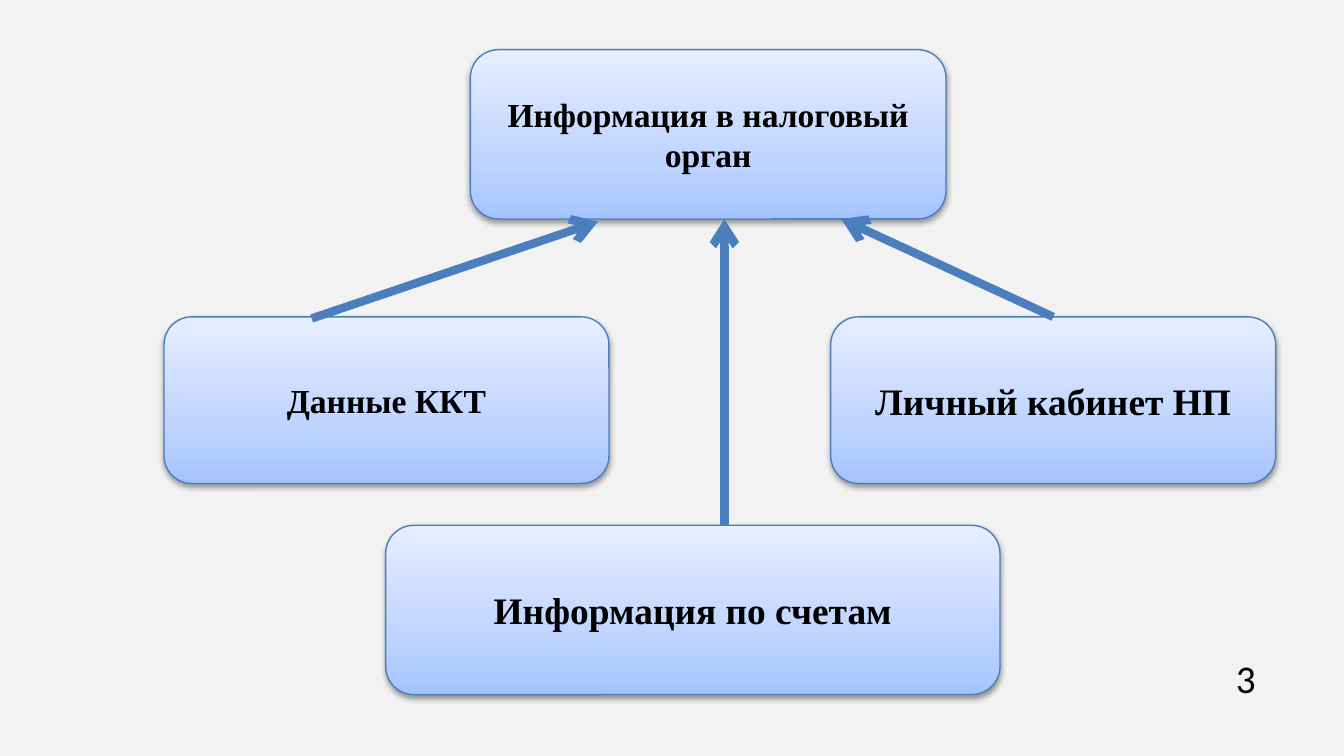
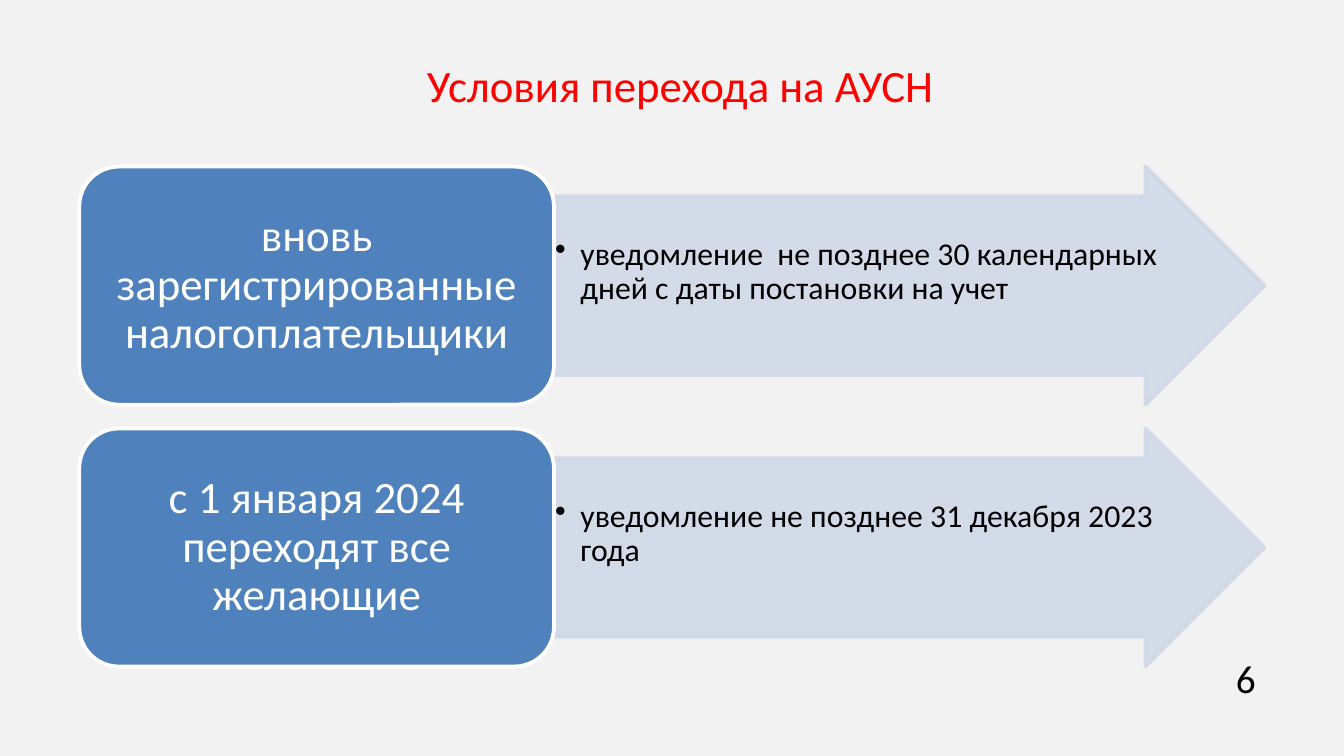
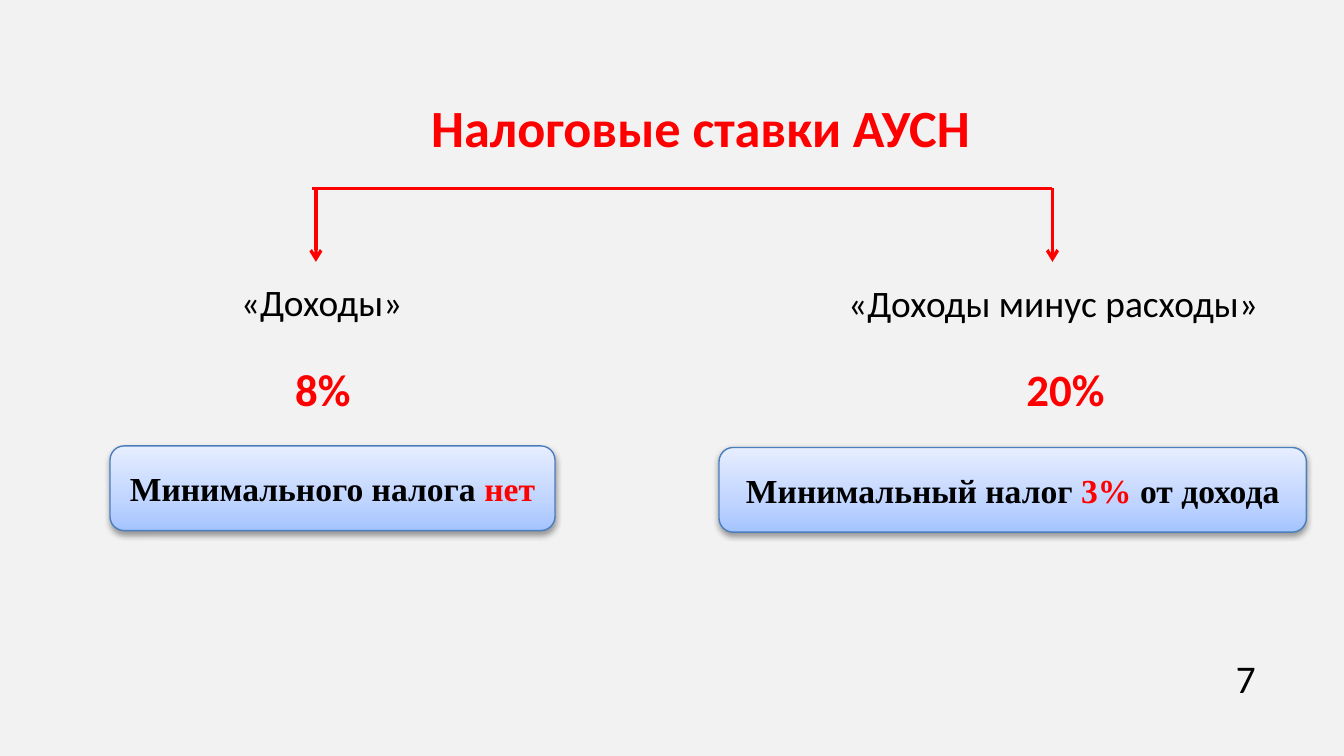
from dataclasses import dataclass
from typing import Optional

from pptx import Presentation, util as u
from pptx.dml import color as col
from pptx.enum import shapes as sh, text as tx
from pptx.oxml import parse_xml
from pptx.oxml.ns import nsdecls, qn

SERIF, SANS = "Times New Roman", "Calibri"
BLACK, WHITE, RED = "000000", "FFFFFF", "FF0000"
PAPER, EDGE, BLUE, PALE = "F2F2F2", "4B7EBC", "4F81BD", "D0D8E8"
GRADE = ((0, "A4C4FF"), (35, "BFD4FF"), (100, "E6EEFF"))
ROUND, ARROW = sh.MSO_SHAPE.ROUNDED_RECTANGLE, sh.MSO_SHAPE.RIGHT_ARROW
LEFT, MID = tx.PP_ALIGN.LEFT, tx.PP_ALIGN.CENTER


@dataclass
class Card:
    left: float
    top: float
    width: float
    height: float
    spans: tuple
    size: int = 18


@dataclass
class Line:
    start: tuple
    end: tuple
    hue: str
    thick: float
    head: bool = True
    source: Optional[int] = None


@dataclass
class Label:
    left: float
    top: float
    width: float
    height: float
    words: str
    size: int
    hue: str = BLACK
    bold: bool = False
    align: tx.PP_ALIGN = LEFT
    wrap: bool = False
    grow: bool = True


@dataclass
class Step:
    name: str
    rule: str


def rgb(hue: str) -> col.RGBColor:
    return col.RGBColor.from_string(hue)


def node(body: str):
    tag, gap, rest = body.partition(" ")
    return parse_xml(f"<a:{tag} {nsdecls('a')} {rest}")


def style(run, face: str, size: int, hue: str, bold: bool = False) -> None:
    run.font.name = face
    run.font.size = u.Pt(size)
    run.font.bold = bold
    run.font.color.rgb = rgb(hue)


def place(slide, kind, left: float, top: float, width: float, height: float,
          fill: str, edge: str, thick: float):
    shape = slide.shapes.add_shape(
        kind, u.Cm(left), u.Cm(top), u.Cm(width), u.Cm(height))
    shape.fill.solid()
    shape.fill.fore_color.rgb = rgb(fill)
    shape.line.color.rgb = rgb(edge)
    shape.line.width = u.Pt(thick)
    shape.shadow.inherit = False
    shape.text_frame.word_wrap = True
    shape.text_frame.vertical_anchor = tx.MSO_ANCHOR.MIDDLE
    return shape


def draw_card(slide, card: Card):
    shape = place(slide, ROUND, card.left, card.top, card.width, card.height,
                  PALE, EDGE, 0.75)
    props = shape.element.spPr
    stops = "".join(
        f'<a:gs pos="{pos * 1000}"><a:srgbClr val="{hue}"/></a:gs>'
        for pos, hue in GRADE)
    props.replace(props.find(qn("a:solidFill")), node(
        f'gradFill rotWithShape="1"><a:gsLst>{stops}</a:gsLst>'
        '<a:lin ang="16200000" scaled="0"/></a:gradFill>'))
    props.find(qn("a:effectLst")).append(node(
        'outerShdw blurRad="40000" dist="20000" dir="5400000" rotWithShape="0">'
        f'<a:srgbClr val="{BLACK}"><a:alpha val="38000"/></a:srgbClr>'
        '</a:outerShdw>'))
    para = shape.text_frame.paragraphs[0]
    para.alignment = MID
    for words, hue in card.spans:
        run = para.add_run()
        run.text = words
        style(run, SERIF, card.size, hue, True)
    return shape


def draw_line(slide, line: Line, cards: list) -> None:
    ends = [u.Cm(n) for n in line.start + line.end]
    link = slide.shapes.add_connector(sh.MSO_CONNECTOR.STRAIGHT, *ends)
    if line.source is not None:
        link.begin_connect(cards[line.source], 0)
    link.line.color.rgb = rgb(line.hue)
    link.line.width = u.Pt(line.thick)
    props = link._element.spPr
    if line.head:
        props.find(qn("a:ln")).append(node('tailEnd type="arrow"/>'))
    props.append(node("effectLst />"))


def draw_label(slide, label: Label) -> None:
    box = slide.shapes.add_textbox(u.Cm(label.left), u.Cm(label.top),
                                   u.Cm(label.width), u.Cm(label.height))
    frame = box.text_frame
    frame.text = label.words
    frame.word_wrap = label.wrap
    if label.grow:
        frame.auto_size = tx.MSO_AUTO_SIZE.SHAPE_TO_FIT_TEXT
    para = frame.paragraphs[0]
    para.alignment = label.align
    style(para.runs[0], SANS, label.size, label.hue, label.bold)


def draw_step(slide, step: Step, top: float) -> None:
    arrow = place(slide, ARROW, 10.46, top, 13.44, 4.5, PALE, PALE, 2)
    arrow.adjustments[0] = 0.75
    for tint in list(arrow.element.spPr.iter(qn("a:srgbClr"))):
        tint.append(node('alpha val="90000"/>'))
    frame = arrow.text_frame
    frame.vertical_anchor = tx.MSO_ANCHOR.TOP
    frame.margin_left = frame.margin_right = frame.margin_bottom = u.Cm(0.03)
    frame.margin_top = u.Cm(0.79)
    frame.text = step.rule
    para = frame.paragraphs[0]
    para.alignment = LEFT
    para.level = 1
    props = para._p.get_or_add_pPr()
    props.set("marL", str(u.Cm(0.48)))
    props.set("indent", str(-u.Cm(0.48)))
    props.append(node('buChar char="•"/>'))
    para.line_spacing = 0.9
    style(para.runs[0], SANS, 17, BLACK)

    box = place(slide, ROUND, 1.5, top, 8.97, 4.5, BLUE, WHITE, 2)
    box.text_frame.text = step.name
    para = box.text_frame.paragraphs[0]
    para.alignment = MID
    para.line_spacing = 0.9
    style(para.runs[0], SANS, 24, WHITE)


def add_page(deck, number: int):
    slide = deck.slides.add_slide(deck.slide_layouts[6])
    draw_label(slide, Label(22.76, 12.24, 1.57, 1.37, str(number), 21,
                            align=MID, wrap=True, grow=False))
    return slide


def draw_flow(slide) -> None:
    cards = [draw_card(slide, card) for card in (
        Card(8.89, 0.94, 8.99, 3.2, (("Информация в налоговый орган", BLACK),)),
        Card(7.29, 9.93, 11.61, 3.2, (("Информация по счетам", BLACK),), 20),
        Card(3.1, 5.99, 8.41, 3.15, (("Данные ККТ", BLACK),)),
        Card(15.7, 5.99, 8.41, 3.15, (("Личный кабинет НП", BLACK),), 20),
    )]
    for line in (
        Line((13.69, 9.93), (13.69, 4.14), EDGE, 4.5),
        Line((19.89, 5.99), (15.9, 4.14), EDGE, 4.5, source=3),
        Line((5.89, 6.02), (11.3, 4.19), EDGE, 4.5),
    ):
        draw_line(slide, line, cards)


def draw_terms(slide) -> None:
    draw_label(slide, Label(7.82, 0.97, 12.55, 1.27, "Условия перехода на АУСН",
                            24, RED, wrap=True))
    steps = (
        Step("вновь зарегистрированные налогоплательщики",
             "уведомление  не позднее 30 календарных дней с даты постановки на учет"),
        Step("с 1 января 2024 переходят все желающие",
             "уведомление не позднее 31 декабря 2023 года"),
    )
    for row, step in enumerate(steps):
        draw_step(slide, step, 3.15 + row * 4.95)


def draw_rates(slide) -> None:
    for line in (
        Line((5.89, 3.56), (19.89, 3.56), RED, 1.75, head=False),
        Line((5.97, 3.56), (5.97, 4.95), RED, 1.75),
        Line((19.89, 3.56), (19.89, 4.95), RED, 1.75),
    ):
        draw_line(slide, line, [])
    for card in (
        Card(2.08, 8.43, 8.41, 1.6,
             (("Минимального налога ", BLACK), ("нет", RED))),
        Card(13.59, 8.46, 11.1, 1.6,
             (("Минимальный налог ", BLACK), ("3%", RED), (" от дохода", BLACK))),
    ):
        draw_card(slide, card)
    for label in (
        Label(7.9, 1.68, 10.82, 1.45, "Налоговые ставки АУСН", 28, RED, True),
        Label(4.29, 5.16, 3.58, 1.12, "«Доходы»", 20, align=MID),
        Label(15.75, 5.18, 8.31, 1.12, "«Доходы минус расходы»", 20, align=MID),
        Label(5.33, 6.71, 1.55, 1.27, "8%", 24, RED, True),
        Label(19.15, 6.71, 1.98, 1.27, "20%", 24, RED, True),
    ):
        draw_label(slide, label)


def main() -> None:
    deck = Presentation()
    deck.slide_width, deck.slide_height = u.Cm(25.4), u.Cm(14.29)
    ground = deck.slide_master.background.fill
    ground.solid()
    ground.fore_color.rgb = rgb(PAPER)
    for number, draw in ((3, draw_flow), (6, draw_terms), (7, draw_rates)):
        draw(add_page(deck, number))
    deck.save("out.pptx")


if __name__ == "__main__":
    main()
